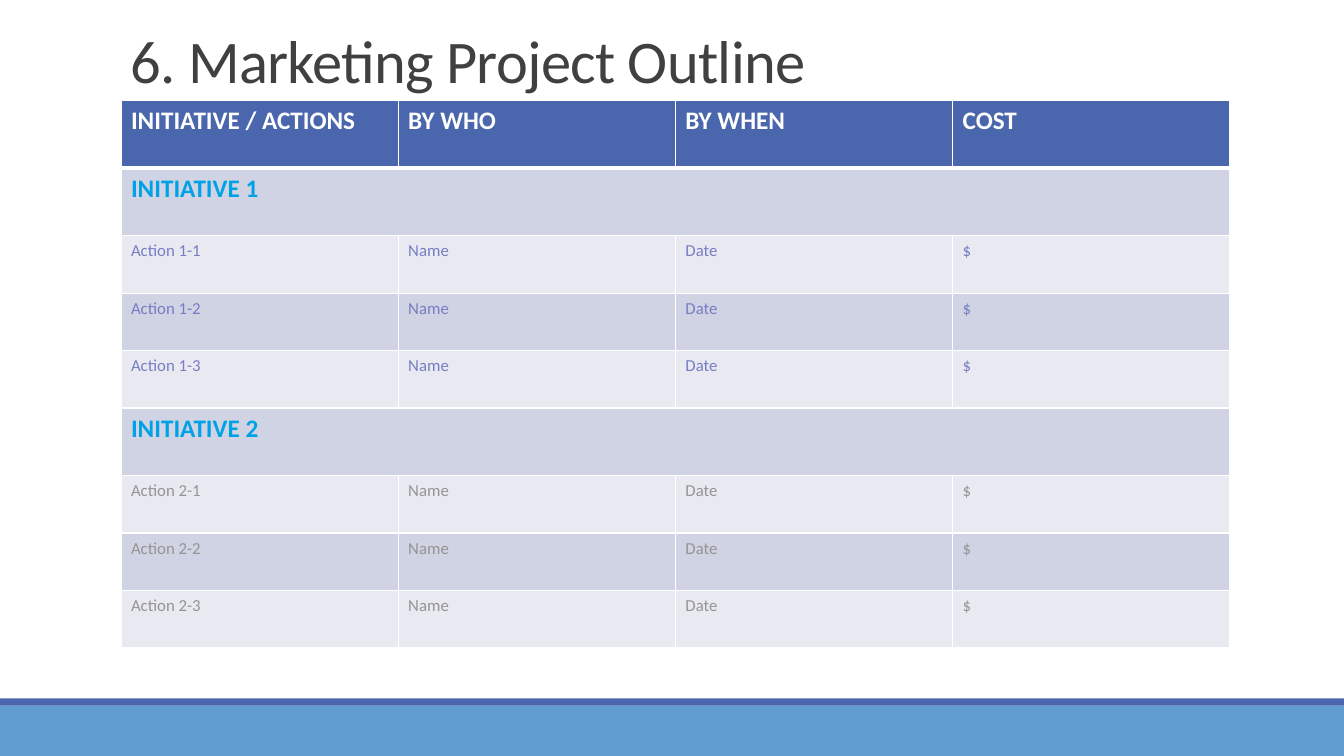
"""Build the marketing project outline slide."""
from dataclasses import dataclass

from lxml import etree
from pptx import Presentation
from pptx.dml.color import RGBColor
from pptx.enum.shapes import MSO_SHAPE
from pptx.enum.text import MSO_ANCHOR
from pptx.oxml.ns import qn
from pptx.slide import Slide
from pptx.table import Table, _Cell
from pptx.text.text import TextFrame
from pptx.util import Emu, Inches, Pt

RECTANGLE = MSO_SHAPE.RECTANGLE
BOTTOM = MSO_ANCHOR.BOTTOM
FONT = "Calibri"
WHITE, NAVY, SKY = "FFFFFF", "4A66AC", "629DD1"
DARK_BAND, LIGHT_BAND = "D0D3E3", "E9EAF1"
TITLE_COLOUR, INITIATIVE_COLOUR = "404040", "00A2E6"
GRID_UNIT = Inches(0.1)
SLIDE_COLUMNS, SLIDE_ROWS = 133.33, 75
TABLE_LEFT, TABLE_TOP, TABLE_COLUMNS = 12, 10, 110
HEADING_ROWS, ACTION_ROWS = 6.7, 5.7
THIN, THICK = 1, 3
HEADERS = ("INITIATIVE / ACTIONS", "BY WHO", "BY WHEN", "COST")


@dataclass(frozen=True)
class Bar:
    """A full-width footer bar, placed in grid rows."""
    top: float
    height: float
    colour: str


@dataclass(frozen=True)
class TableRow:
    """One table row; a single text spans every column."""
    texts: tuple[str, ...]
    height: float
    size: float
    colour: str
    fill: str
    bold: bool = False
    top_border: float = THIN
    bottom_border: float = THIN


BARS = (Bar(70, 5, SKY), Bar(69.3, 0.7, NAVY))
ACTION_COLOURS = ("777DC3", "949494")


def grid(units: float) -> Emu:
    """Turn grid columns or rows into a length."""
    return Emu(round(units * GRID_UNIT))


def colour(value: str) -> RGBColor:
    """Turn a hex string into a colour."""
    return RGBColor.from_string(value)


def write_text(frame: TextFrame, text: str, *, size: float, hex_colour: str,
               bold: bool = False, line_spacing: float = 1, tracking: float = 0) -> None:
    """Write one formatted paragraph into a text frame."""
    paragraph = frame.paragraphs[0]
    paragraph.line_spacing = line_spacing
    run = paragraph.add_run()
    run.text = text
    run.font.name = FONT
    run.font.size = Pt(size)
    run.font.bold = bold
    run.font.color.rgb = colour(hex_colour)
    if tracking:
        run.font._element.set("spc", str(round(tracking * 100)))


def draw_bar(slide: Slide, bar: Bar) -> None:
    """Draw a footer bar."""
    shape = slide.shapes.add_shape(
        RECTANGLE, 0, grid(bar.top), grid(SLIDE_COLUMNS), grid(bar.height))
    shape.shadow.inherit = False
    shape.fill.solid()
    shape.fill.fore_color.rgb = colour(bar.colour)
    shape.line.fill.background()


def draw_title(slide: Slide, text: str) -> None:
    """Draw the title above the table."""
    box = slide.shapes.add_textbox(
        grid(TABLE_LEFT), grid(3.1), grid(TABLE_COLUMNS), grid(6.9))
    box.text_frame.word_wrap = True
    box.text_frame.vertical_anchor = BOTTOM
    write_text(box.text_frame, text, size=43.2, hex_colour=TITLE_COLOUR,
               line_spacing=0.85, tracking=-0.5)


def set_borders(cell: _Cell, top: float, bottom: float) -> None:
    """Give a cell white borders of the given widths in points."""
    properties = cell._tc.get_or_add_tcPr()
    sides = {"a:lnL": THIN, "a:lnR": THIN, "a:lnT": top, "a:lnB": bottom}
    for position, (tag, width) in enumerate(sides.items()):
        line = etree.Element(qn(tag), w=str(Pt(width)))
        fill = etree.SubElement(line, qn("a:solidFill"))
        etree.SubElement(fill, qn("a:srgbClr"), val=WHITE)
        properties.insert(position, line)


def outline_rows() -> list[TableRow]:
    """List the header, the initiatives and their actions."""
    rows = [TableRow(HEADERS, HEADING_ROWS, 18, WHITE, NAVY, True, bottom_border=THICK)]
    for initiative, action_colour in enumerate(ACTION_COLOURS, start=1):
        rows.append(TableRow(
            (f"INITIATIVE {initiative}",), HEADING_ROWS, 18, INITIATIVE_COLOUR, DARK_BAND,
            True, top_border=THICK if initiative == 1 else THIN))
        for action in range(1, 4):
            rows.append(TableRow(
                (f"Action {initiative}-{action}", "Name", "Date", "$"), ACTION_ROWS, 12,
                action_colour, LIGHT_BAND if action % 2 else DARK_BAND))
    return rows


def fill_row(table: Table, index: int, row: TableRow) -> None:
    """Format and fill one table row."""
    table.rows[index].height = grid(row.height)
    cells = list(table.rows[index].cells)
    for cell in cells:
        cell.fill.solid()
        cell.fill.fore_color.rgb = colour(row.fill)
        set_borders(cell, row.top_border, row.bottom_border)
    if len(row.texts) == 1:
        cells[0].merge(cells[-1])
    for cell, text in zip(cells, row.texts):
        write_text(cell.text_frame, text, size=row.size, hex_colour=row.colour, bold=row.bold)


def draw_table(slide: Slide, rows: list[TableRow]) -> None:
    """Draw the project outline table."""
    table = slide.shapes.add_table(
        len(rows), len(HEADERS), grid(TABLE_LEFT), grid(TABLE_TOP),
        grid(TABLE_COLUMNS), grid(sum(row.height for row in rows))).table
    table.horz_banding = False
    for column in table.columns:
        column.width = grid(TABLE_COLUMNS / len(HEADERS))
    for index, row in enumerate(rows):
        fill_row(table, index, row)


def main() -> None:
    """Build and save the presentation."""
    presentation = Presentation()
    presentation.slide_width = grid(SLIDE_COLUMNS)
    presentation.slide_height = grid(SLIDE_ROWS)
    slide = presentation.slides.add_slide(presentation.slide_layouts[6])
    for bar in BARS:
        draw_bar(slide, bar)
    draw_title(slide, "6. Marketing Project Outline")
    draw_table(slide, outline_rows())
    presentation.save("out.pptx")


if __name__ == "__main__":
    main()
